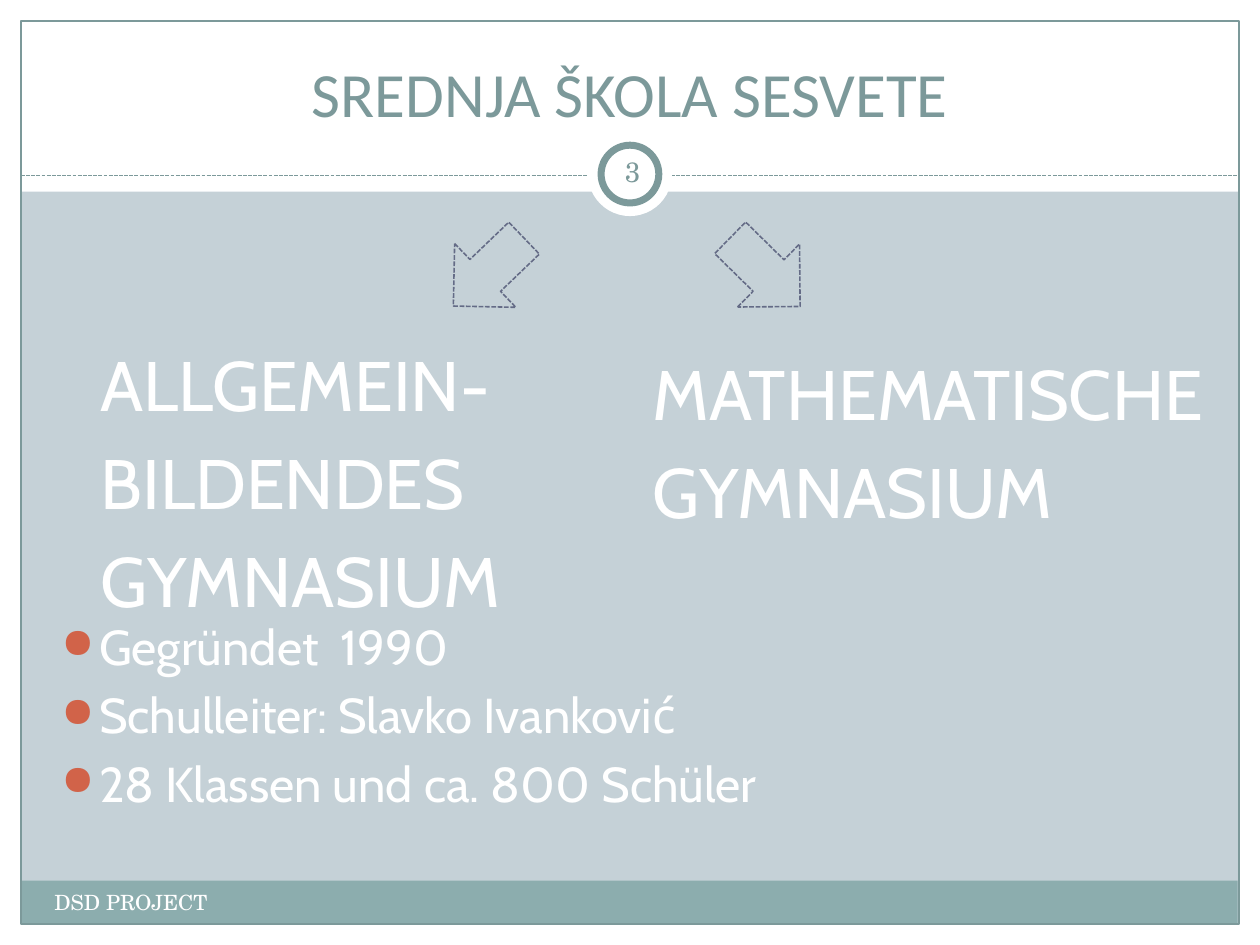
from dataclasses import dataclass
from typing import Optional

from lxml.etree import SubElement
from pptx import Presentation
from pptx.dml.color import RGBColor
from pptx.enum.dml import MSO_LINE
from pptx.enum.shapes import MSO_CONNECTOR, MSO_SHAPE
from pptx.enum.text import MSO_ANCHOR, MSO_AUTO_SIZE, PP_ALIGN
from pptx.oxml.ns import qn
from pptx.util import Pt

COLORS = {
    "background": "C5D1D7",
    "white": "FFFFFF",
    "band": "8CADAE",
    "teal": "7C999A",
    "arrow": "646B86",
    "bullet": "D16349",
}
WIDTH, HEIGHT, MARGIN = 720, 540, 12
HANGING = 21.6


@dataclass
class Box:
    left: float
    top: float
    width: float
    height: float

    def lengths(self) -> list:
        return [Pt(self.left), Pt(self.top), Pt(self.width), Pt(self.height)]


@dataclass
class Figure:
    box: Box
    fill: Optional[str] = "white"
    line: Optional[str] = None
    line_width: float = 0.75
    kind: MSO_SHAPE = MSO_SHAPE.RECTANGLE
    rotation: float = 0
    dash: Optional[MSO_LINE] = None


@dataclass
class TextBlock:
    box: Box
    lines: list[str]
    size: float
    font: str = "Cabin"
    color: str = "white"
    align: PP_ALIGN = PP_ALIGN.LEFT
    anchor: MSO_ANCHOR = MSO_ANCHOR.TOP
    hanging: bool = False
    bullets: bool = False
    inset: Optional[float] = None


def color(name: str) -> RGBColor:
    return RGBColor.from_string(COLORS[name])


def draw_figure(slide, figure: Figure) -> None:
    shape = slide.shapes.add_shape(figure.kind, *figure.box.lengths())
    shape.shadow.inherit = False
    shape.rotation = figure.rotation
    if figure.fill:
        shape.fill.solid()
        shape.fill.fore_color.rgb = color(figure.fill)
    else:
        shape.fill.background()
    if figure.line:
        shape.line.color.rgb = color(figure.line)
        shape.line.width = Pt(figure.line_width)
        if figure.dash:
            shape.line.dash_style = figure.dash
    else:
        shape.line.fill.background()


def draw_divider(slide, top: float) -> None:
    connector = slide.shapes.add_connector(
        MSO_CONNECTOR.STRAIGHT, Pt(MARGIN), Pt(top), Pt(WIDTH - MARGIN), Pt(top))
    connector.line.color.rgb = color("teal")
    connector.line.width = Pt(0.75)
    connector.line.dash_style = MSO_LINE.SQUARE_DOT
    SubElement(connector.element.spPr, qn("a:effectLst"))


def format_paragraph(paragraph, block: TextBlock) -> None:
    paragraph.alignment = block.align
    for run in paragraph.runs:
        run.font.name = block.font
        run.font.size = Pt(block.size)
        run.font.color.rgb = color(block.color)
    if block.hanging:
        paragraph.space_before = Pt(block.size * 0.2)
        properties = paragraph._p.get_or_add_pPr()
        properties.set("marL", str(Pt(HANGING)))
        properties.set("indent", str(-Pt(HANGING)))
        if block.bullets:
            bullet_color = SubElement(properties, qn("a:buClr"))
            SubElement(bullet_color, qn("a:srgbClr"), val=COLORS["bullet"])
            SubElement(properties, qn("a:buSzPct"), val="85000")
            SubElement(properties, qn("a:buChar"), char="●")


def fill_text(shape, block: TextBlock) -> None:
    shape.left, shape.top, shape.width, shape.height = block.box.lengths()
    text_frame = shape.text_frame
    text_frame.word_wrap = True
    text_frame.auto_size = MSO_AUTO_SIZE.NONE
    text_frame.vertical_anchor = block.anchor
    if block.inset is not None:
        text_frame.margin_left = text_frame.margin_right = Pt(block.inset)
        text_frame.margin_top = text_frame.margin_bottom = Pt(block.inset)
    text_frame.text = "\n".join(block.lines)
    for paragraph in text_frame.paragraphs:
        format_paragraph(paragraph, block)


def arrow(left: float, rotation: float) -> Figure:
    return Figure(Box(left, 127.5, 50.5, 56), "background", "arrow", 0.9,
                  MSO_SHAPE.DOWN_ARROW, rotation, MSO_LINE.SQUARE_DOT)


FRAME = [
    Figure(Box(0, HEIGHT - MARGIN, WIDTH, MARGIN)),
    Figure(Box(0, 0, WIDTH, 109.5)),
    Figure(Box(0, 0, MARGIN, HEIGHT)),
    Figure(Box(WIDTH - MARGIN, 0, MARGIN, HEIGHT)),
    Figure(Box(11.75, 503.25, 695.5, 24.5), "band"),
    Figure(Box(MARGIN, MARGIN, WIDTH - 2 * MARGIN, HEIGHT - 2 * MARGIN), None, "teal"),
]
BADGE = [
    Figure(Box(336, 75.5, 48, 48), kind=MSO_SHAPE.OVAL),
    Figure(Box(343.5, 83, 33, 33), "white", "teal", 4, MSO_SHAPE.OVAL),
]
ARROWS = [arrow(254, 46.2), arrow(412, 314.5)]
TITLE = TextBlock(Box(24, 18, 672, 60), ["SREDNJA ŠKOLA SESVETE"], 36, "Calibri",
                  "teal", PP_ALIGN.CENTER, MSO_ANCHOR.BOTTOM)
TEXTS = [
    TextBlock(Box(24, 504.75, 282, 29), ["DSD PROJECT"], 12, "TeX Gyre Schola"),
    TextBlock(Box(343.5, 80.75, 36, 34.5), ["3"], 16, "TeX Gyre Schola", "teal",
              PP_ALIGN.CENTER, MSO_ANCHOR.MIDDLE, inset=3.6),
    TextBlock(Box(28, 348.5, 670, 120),
              ["Gegründet  1990", "Schulleiter: Slavko Ivanković",
               "28 Klassen und ca. 800 Schüler"], 28, hanging=True, bullets=True),
    TextBlock(Box(50.5, 191.5, 298, 73.5),
              ["ALLGEMEIN-", "BILDENDES", "GYMNASIUM"], 40, hanging=True),
    TextBlock(Box(366, 196.5, 332, 73.5),
              ["MATHEMATISCHE", "GYMNASIUM"], 40, hanging=True),
]


def main() -> None:
    presentation = Presentation()
    presentation.slide_width, presentation.slide_height = Pt(WIDTH), Pt(HEIGHT)
    slide = presentation.slides.add_slide(presentation.slide_layouts[5])
    slide.background.fill.solid()
    slide.background.fill.fore_color.rgb = color("background")

    for figure in FRAME:
        draw_figure(slide, figure)
    draw_divider(slide, 100.5)
    for figure in BADGE + ARROWS:
        draw_figure(slide, figure)

    title = slide.shapes.title
    fill_text(title, TITLE)
    title.element.getparent().append(title.element)
    for block in TEXTS:
        fill_text(slide.shapes.add_textbox(*block.box.lengths()), block)

    presentation.save("out.pptx")


if __name__ == "__main__":
    main()
